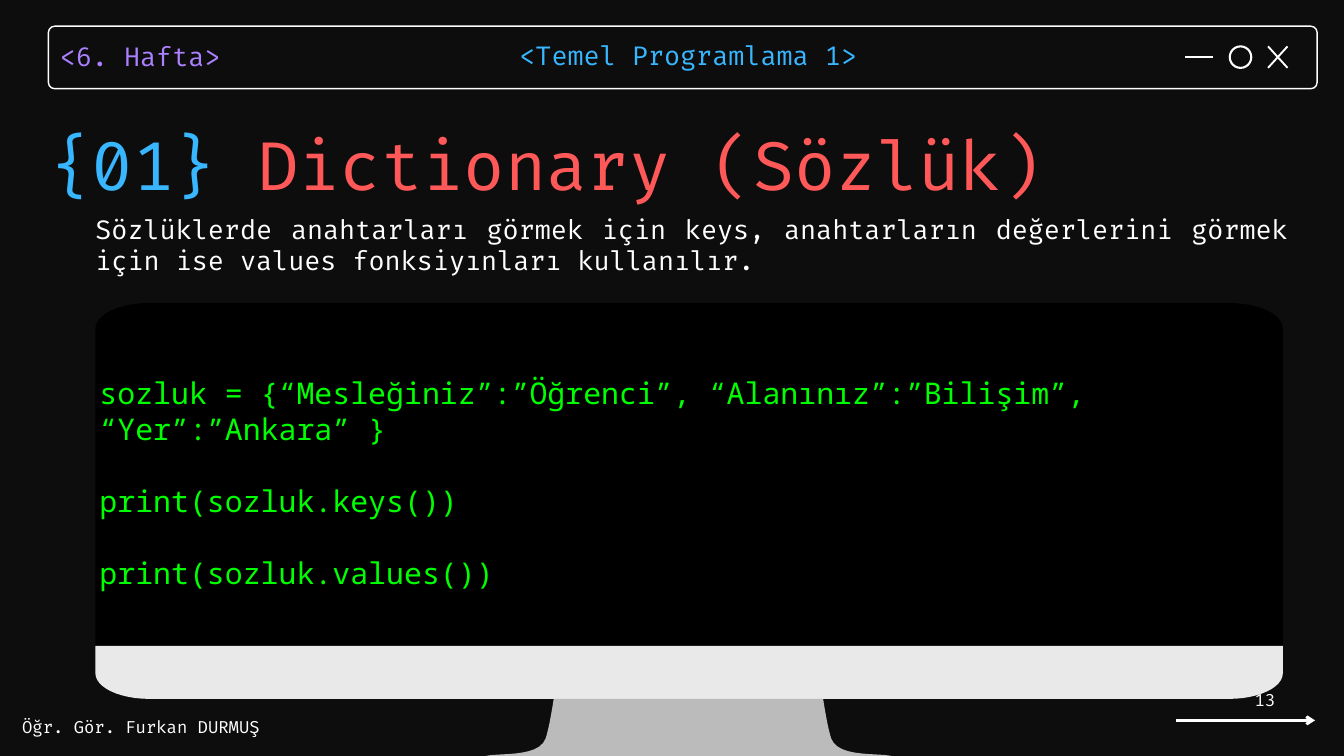
from math import cos, pi, sin

from lxml import etree
from pptx import Presentation
from pptx.dml.color import RGBColor
from pptx.enum.shapes import MSO_CONNECTOR, MSO_SHAPE
from pptx.enum.text import MSO_ANCHOR, MSO_AUTO_SIZE, PP_ALIGN
from pptx.oxml.ns import qn
from pptx.util import Inches, Pt

INK = RGBColor(0x0D, 0x0D, 0x0D)
WHITE = RGBColor(0xFF, 0xFF, 0xFF)
BLACK = RGBColor(0, 0, 0)
PURPLE = RGBColor(0xAB, 0x81, 0xFF)
BLUE = RGBColor(0x38, 0xB6, 0xFF)
RED = RGBColor(0xFF, 0x58, 0x58)
GREEN = RGBColor(0, 0xFF, 0)
PALE = RGBColor(0xE9, 0xE9, 0xE9)
GREY = RGBColor(0xBB, 0xBB, 0xBB)
FIRA, MONO = "Fira Code", "Noto Sans Mono"

STRAIGHT = MSO_CONNECTOR.STRAIGHT
ROUND, OVAL = MSO_SHAPE.ROUNDED_RECTANGLE, MSO_SHAPE.OVAL
LEFT, RIGHT, JUST = PP_ALIGN.LEFT, PP_ALIGN.RIGHT, PP_ALIGN.JUSTIFY
TOP, MIDDLE = MSO_ANCHOR.TOP, MSO_ANCHOR.MIDDLE
FIXED = MSO_AUTO_SIZE.NONE

# The slide is a grid of square cells, one inch each
COLS, ROWS = 20, 11.25


def sub(box, x, y, w, h):
    """A box of w by h cells, placed x, y cells into the given box."""
    return box[0] + x, box[1] + y, w, h


def emu(cells):
    return [Inches(c) for c in cells]


def move(shape, box):
    shape.left, shape.top, shape.width, shape.height = emu(box)


def write(shape, paras, size, font=FIRA, align=LEFT, anchor=TOP, lead=None, gap=0):
    """Each paragraph is a list of (text, colour) runs."""
    frame = shape.text_frame
    frame.word_wrap, frame.auto_size = True, FIXED
    frame.vertical_anchor = anchor
    frame.margin_left = frame.margin_right = 0
    frame.margin_top = frame.margin_bottom = 0
    for i, runs in enumerate(paras):
        para = frame.add_paragraph() if i else frame.paragraphs[0]
        para.alignment = align
        para.space_before = Pt(gap if i else 0)
        if lead:
            para.line_spacing = Pt(lead)
        for text, tone in runs:
            run = para.add_run()
            run.text = text
            run.font.size, run.font.name = Pt(size), font
            run.font.color.rgb = tone


def label(slide, box, *args, **opts):
    shape = slide.shapes.add_textbox(*emu(box))
    write(shape, *args, **opts)


def rule(slide, box, width, arrow=False):
    x, y, w, h = box
    line = slide.shapes.add_connector(STRAIGHT, *emu((x, y, x + w, y + h)))
    line.line.color.rgb, line.line.width = WHITE, Pt(width)
    props = line._element.spPr
    if arrow:
        etree.SubElement(props.find(qn("a:ln")), qn("a:tailEnd"), type="arrow")
    etree.SubElement(props, qn("a:effectLst"))


def ring(slide, kind, box, width):
    shape = slide.shapes.add_shape(kind, *emu(box))
    shape.shadow.inherit = False
    shape.fill.background()
    shape.line.color.rgb, shape.line.width = WHITE, Pt(width)
    return shape


def curve(a, b, c, d, steps=12):
    """Points along a cubic curve."""
    ts = [i / steps for i in range(steps + 1)]
    return [tuple((1 - t) ** 3 * p + 3 * t * (1 - t) ** 2 * q
                  + 3 * t * t * (1 - t) * r + t ** 3 * s
                  for p, q, r, s in zip(a, b, c, d)) for t in ts]


def solid(slide, box, half, tone):
    """Fill an outline given by its left half, mirrored within the box."""
    x, y, w, _ = box
    full = half + [(w - px, py) for px, py in reversed(half)]
    pts = [tuple(emu((x + px, y + py))) for px, py in full]
    pen = slide.shapes.build_freeform(*pts[0])
    pen.add_line_segments(pts[1:], close=True)
    shape = pen.convert_to_shape()
    shape.shadow.inherit = False
    shape.fill.solid()
    shape.fill.fore_color.rgb = tone
    shape.line.fill.background()


def header(slide, box):
    frame = ring(slide, ROUND, box, 1.5)
    frame.adjustments[0] = 0.1
    label(slide, sub(box, 0.17, 0.13, 3.4, 0.53),
          [[("<6. Hafta>", PURPLE)]], 28, lead=39.2)
    label(slide, sub(box, 7.01, 0.12, 5.29, 0.53),
          [[("<Temel Programlama 1>", BLUE)]], 28, lead=39.2)
    # Window buttons
    rule(slide, sub(box, 16.92, 0.46, 0.41, 0), 2)
    ring(slide, OVAL, sub(box, 17.58, 0.3, 0.32, 0.32), 2.25)
    rule(slide, sub(box, 18.15, 0.3, 0.29, 0.32), 2)
    rule(slide, sub(box, 18.15, 0.62, 0.29, -0.32), 2)


def topic(slide, box):
    title, body = slide.shapes.title, slide.placeholders[1]
    move(title, sub(box, 0, 0, 19.25, 1.41))
    write(title, [[("{01} ", BLUE), ("Dictionary (Sözlük)", RED)]], 72, lead=102.6)
    move(body, sub(box, 0.67, 1.56, 17.73, 0.94))
    write(body, [[("Sözlüklerde anahtarları görmek için keys, anahtarların "
                   "değerlerini görmek için ise values fonksiyınları "
                   "kullanılır.", WHITE)]], 28, align=JUST)
    props = body.text_frame.paragraphs[0]._p.get_or_add_pPr()
    props.set("marL", "0")
    props.set("indent", "0")
    etree.SubElement(props, qn("a:buNone"))


def monitor(slide, box):
    rx, ry, high, chin = 0.8, 0.38, 5.1, 0.79
    turn = [i * pi / 24 for i in range(13)]
    # Screen with rounded top
    arc = [(rx - rx * cos(a), ry - ry * sin(a)) for a in turn]
    solid(slide, box, [(0, high)] + arc, BLACK)
    # Chin with rounded bottom
    arc = [(rx - rx * cos(a), chin - ry + ry * sin(a)) for a in turn]
    solid(slide, sub(box, 0, high, box[2], chin), [(0, 0)] + arc, PALE)
    # Stand
    foot = (curve((1.08, 0), (1.08, 0), (1.02, 0.41), (0.96, 0.59))
            + curve((0.96, 0.59), (0.85, 0.89), (0.21, 0.79), (0.03, 0.86))
            + [(0, 0.87), (0.05, 0.88)])
    solid(slide, sub(box, 5.74, high + chin, 6.17, 0.89), foot, GREY)
    # Code
    lines = ["sozluk = {“Mesleğiniz”:”Öğrenci”, “Alanınız”:”Bilişim”, “Yer”:”Ankara” }",
             "print(sozluk.keys())", "print(sozluk.values())"]
    label(slide, sub(box, 0.06, 1.06, 17.67, 2.69),
          [[(line, GREEN)] for line in lines], 32, font=MONO, gap=39)


def footer(slide, box):
    label(slide, sub(box, 0.33, 0.46, 3.67, 0.3),
          [[("Öğr. Gör. Furkan DURMUŞ", WHITE)]], 18)
    label(slide, sub(box, 16.85, 0, 2.13, 0.4),
          [[("13", WHITE)]], 18, align=RIGHT, anchor=MIDDLE)
    rule(slide, sub(box, 17.5, 0.51, 2.07, 0), 3, arrow=True)


def main():
    deck = Presentation()
    deck.slide_width, deck.slide_height = emu((COLS, ROWS))
    slide = deck.slides.add_slide(deck.slide_layouts[1])
    slide.background.fill.solid()
    slide.background.fill.fore_color.rgb = INK
    header(slide, (0.72, 0.39, 18.88, 0.93))
    topic(slide, (0.75, 1.61, 19.25, 2.5))
    monitor(slide, (1.42, 4.51, 17.67, 6.74))
    footer(slide, (0, 10.21, COLS, 1.04))
    deck.save("out.pptx")


if __name__ == "__main__":
    main()
